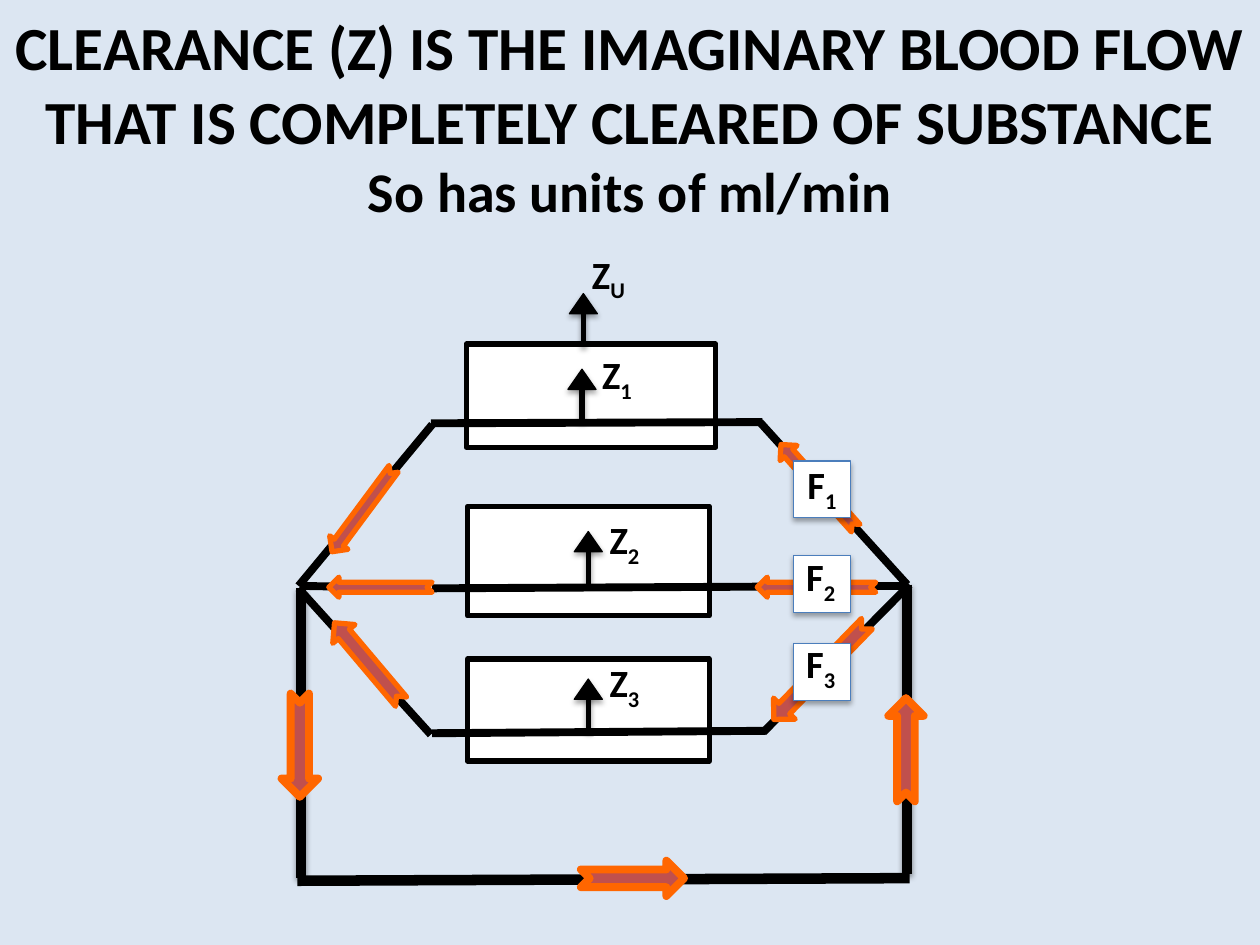
from lxml import etree
from pptx import Presentation
from pptx.dml.color import RGBColor
from pptx.enum.shapes import MSO_CONNECTOR, MSO_SHAPE
from pptx.enum.text import MSO_ANCHOR, PP_ALIGN
from pptx.oxml.ns import qn
from pptx.util import Pt

STRAIGHT = MSO_CONNECTOR.STRAIGHT
RECTANGLE = MSO_SHAPE.RECTANGLE
TRIANGLE = MSO_SHAPE.ISOSCELES_TRIANGLE
NOTCHED_ARROW = MSO_SHAPE.NOTCHED_RIGHT_ARROW
MIDDLE = MSO_ANCHOR.MIDDLE
CENTER = PP_ALIGN.CENTER

BACKGROUND = RGBColor(0xDC, 0xE6, 0xF2)
BLACK = RGBColor(0, 0, 0)
WHITE = RGBColor(0xFF, 0xFF, 0xFF)
RED = RGBColor(0xC0, 0x50, 0x4D)
ORANGE = RGBColor(0xFF, 0x66, 0x00)
BLUE = RGBColor(0x4B, 0x7E, 0xBC)
FONT = "Calibri"


def set_shadow(shape, opacity, distance=1.8):
    """Give a shape a soft shadow below it, or none when opacity is 0."""
    properties = shape._element.spPr
    for old in properties.findall(qn("a:effectLst")):
        properties.remove(old)
    effects = etree.SubElement(properties, qn("a:effectLst"))
    if opacity:
        shadow = etree.SubElement(
            effects, qn("a:outerShdw"), blurRad=str(Pt(3.1)),
            dist=str(Pt(distance)), dir="5400000", rotWithShape="0")
        color = etree.SubElement(shadow, qn("a:srgbClr"), val=str(BLACK))
        etree.SubElement(color, qn("a:alpha"), val=str(opacity * 1000))


def add_line(x1, y1, x2, y2, width, opacity=0):
    line = slide.shapes.add_connector(STRAIGHT, Pt(x1), Pt(y1), Pt(x2), Pt(y2))
    line.line.color.rgb = BLACK
    line.line.width = Pt(width)
    set_shadow(line, opacity, 1.6)


presentation = Presentation()
presentation.slide_width, presentation.slide_height = Pt(720), Pt(540)
slide = presentation.slides.add_slide(presentation.slide_layouts[6])
slide.background.fill.solid()
slide.background.fill.fore_color.rgb = BACKGROUND

# Title
title = slide.shapes.add_textbox(Pt(0), Pt(21.6), Pt(720), Pt(90))
title.text_frame.word_wrap = True
title.text_frame.vertical_anchor = MIDDLE
paragraph = title.text_frame.paragraphs[0]
paragraph.text = ("CLEARANCE (Z) IS THE IMAGINARY BLOOD FLOW "
                  "THAT IS COMPLETELY CLEARED OF SUBSTANCE\v"
                  "So has units of ml/min")
paragraph.alignment = CENTER
for run, size in zip(paragraph.runs, (35, 32)):
    run.font.name, run.font.size, run.font.bold = FONT, Pt(size), True
    run.font.color.rgb = BLACK

# Branches joining the three organs to the main vessel
for branch in (
    (247, 242.6, 170.6, 334.8),
    (434.2, 241.2, 518.4, 334.1),
    (246.2, 336.2, 172.1, 334.8),
    (246.2, 419.8, 170.6, 336.2),
    (519.8, 334.1, 436.3, 418.3),
):
    add_line(*branch, 4.5)

# Main vessel: bottom, left and right
add_line(169.9, 503.3, 519.8, 501.8, 6)
add_line(172.1, 336.2, 172.1, 501.8, 6, 38)
add_line(518.4, 334.1, 518.4, 499.7, 6, 38)

# Organ boxes
for left, top, width, height in (
    (266.4, 196.6, 142.6, 59),
    (267.1, 289.4, 138.2, 62.6),
    (267.1, 376.6, 138.2, 58.3),
):
    organ = slide.shapes.add_shape(RECTANGLE, Pt(left), Pt(top), Pt(width), Pt(height))
    organ.fill.solid()
    organ.fill.fore_color.rgb = WHITE
    organ.line.color.rgb = BLACK
    organ.line.width = Pt(3)
    set_shadow(organ, 0)

# Clearance arrows: stem and head, by centre and tip
for center, tip in ((332.6, 211), (336.2, 303.8), (336.2, 388.1), (333.4, 167.8)):
    add_line(center, tip + 6.5, center, tip + 30.2, 3, 38)
    head = slide.shapes.add_shape(TRIANGLE, Pt(center - 8), Pt(tip), Pt(16), Pt(11.5))
    head.fill.solid()
    head.fill.fore_color.rgb = BLACK
    head.line.color.rgb = BLACK
    head.line.width = Pt(0.75)
    set_shadow(head, 35)

# Vessels running through the organs
add_line(246.2, 241.9, 435.6, 241.2, 4.5)
add_line(247, 419, 437.8, 417.6, 4.5)
add_line(247, 336.2, 518.4, 334.8, 4.5)

# Flow arrows: left, top, width, height, rotation, outline
for left, top, width, height, rotation, outline in (
    (331.9, 491.8, 59, 20.2, 0, 4.5),
    (488.2, 418.3, 59, 20.2, 270, 4.5),
    (141.8, 415.4, 59, 20.9, 90, 4.5),
    (177.8, 285.1, 59, 13, 126.6, 3),
    (187.9, 329.8, 59, 11.5, 180, 3),
    (180.7, 370.1, 59, 16.6, 229.8, 3),
    (435.6, 271.4, 64.1, 13, 228.2, 3),
    (432.7, 329.8, 67.7, 11.5, 180, 3),
    (430.6, 375.1, 76.3, 17.3, 134.2, 3),
):
    arrow = slide.shapes.add_shape(NOTCHED_ARROW, Pt(left), Pt(top), Pt(width), Pt(height))
    arrow.rotation = rotation
    arrow.fill.solid()
    arrow.fill.fore_color.rgb = RED
    arrow.line.color.rgb = ORANGE
    arrow.line.width = Pt(outline)
    set_shadow(arrow, 0)

# Flow label plates
for top in (263.5, 317.5, 367.9):
    plate = slide.shapes.add_shape(RECTANGLE, Pt(453.6), Pt(top), Pt(32.4), Pt(32.4))
    plate.fill.solid()
    plate.fill.fore_color.rgb = WHITE
    plate.line.color.rgb = BLUE
    plate.line.width = Pt(0.75)
    set_shadow(plate, 35)

# Labels with subscripts, wide enough to stay on one line
for letter, subscript, left, top in (
    ("Z", "U", 331.2, 139.7),
    ("Z", "1", 337, 197.3),
    ("Z", "2", 341.3, 291.6),
    ("Z", "3", 341.3, 373),
    ("F", "1", 454.3, 259.9),
    ("F", "2", 453.6, 312.5),
    ("F", "3", 453.6, 362.2),
):
    label = slide.shapes.add_textbox(Pt(left), Pt(top), Pt(36), Pt(33.8))
    label.text_frame.word_wrap = True
    paragraph = label.text_frame.paragraphs[0]
    paragraph.text = letter
    paragraph.add_run().text = subscript
    for run in paragraph.runs:
        run.font.name, run.font.size, run.font.bold = FONT, Pt(22), True
        run.font.color.rgb = BLACK
    paragraph.runs[1].font._element.set("baseline", "-25000")

presentation.save("out.pptx")
